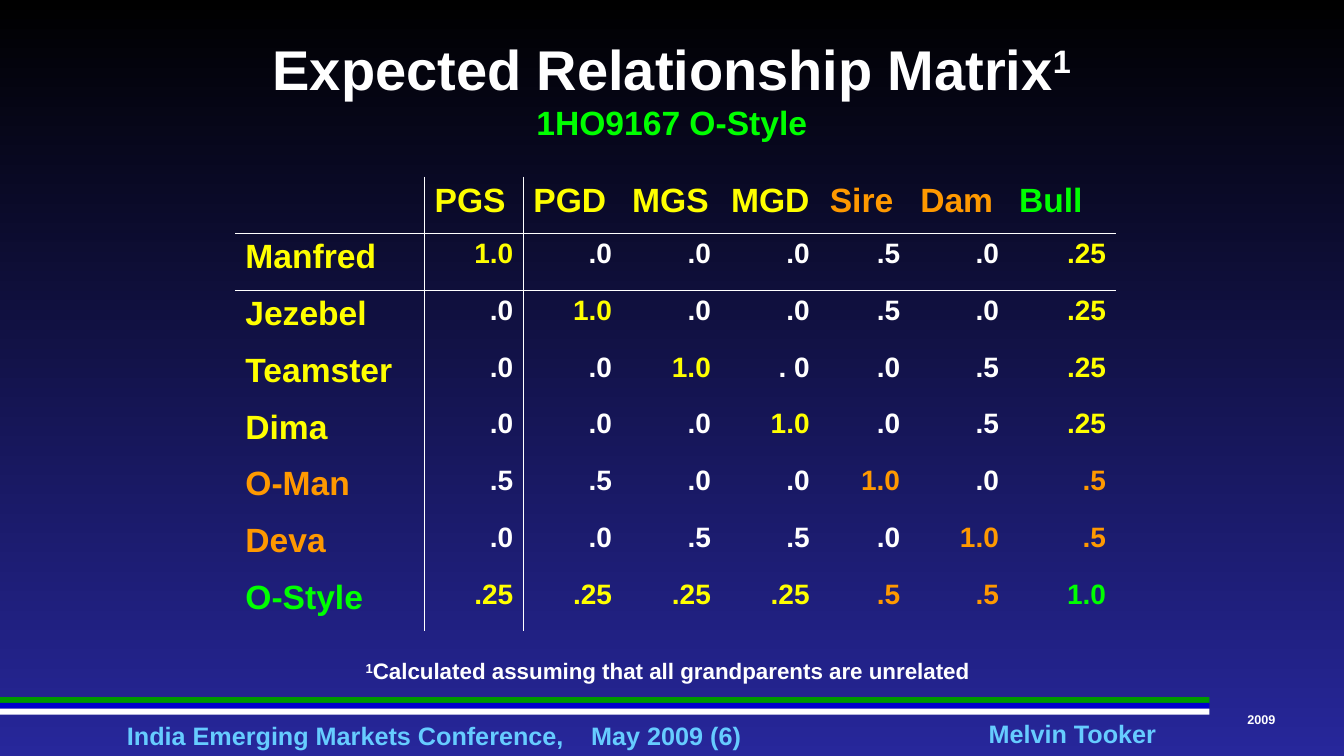
from dataclasses import dataclass

from lxml import etree
from pptx import Presentation
from pptx import util as u
from pptx.dml.color import RGBColor
from pptx.enum import shapes, text
from pptx.oxml import ns

WHITE, YELLOW, ORANGE, GREEN, SKY = "FFFFFF", "FFFF00", "FF9900", "00FF00", "66CCFF"
LEFT, MID, RIGHT = text.PP_ALIGN.LEFT, text.PP_ALIGN.CENTER, text.PP_ALIGN.RIGHT
PLAIN_GRID = "{2D5ABB26-0587-4C30-8999-92F81FD0307C}"


@dataclass
class Label:
    words: str
    left: float
    top: float
    width: float
    height: float
    size: int
    hue: str = SKY
    align: int = MID
    wrap: bool = True
    mark: str = ""
    inset: bool = False
    tab: float = 0


@dataclass
class Bar:
    top: float
    hue: str


@dataclass
class Member:
    role: str
    name: str
    hue: str
    width: float
    shares: str


LABELS = [
    Label("India Emerging Markets Conference,\tMay 2009 (6)", 3.2, 18.16, 19.94, 0.76, 18,
          align=LEFT, tab=11.7),
    Label("Melvin Tooker", 24.89, 18.1, 4.27, 0.76, 18, wrap=False),
    Label("2009", 31.32, 17.94, 0.94, 0.38, 9, WHITE),
    Label("Calculated assuming that all grandparents are unrelated", 5.72, 16.44, 22.22, 0.94,
          16, WHITE, mark="1", inset=True),
]
BARS = [Bar(17.57, "009900"), Bar(17.71, "0000CC"), Bar(17.86, WHITE)]
HERD = [
    Member("PGS", "Manfred", YELLOW, 2.49, "1.0,.0,.0,.0,.5,.0,.25"),
    Member("PGD", "Jezebel", YELLOW, 2.49, ".0,1.0,.0,.0,.5,.0,.25"),
    Member("MGS", "Teamster", YELLOW, 2.49, ".0,.0,1.0,. 0,.0,.5,.25"),
    Member("MGD", "Dima", YELLOW, 2.49, ".0,.0,.0,1.0,.0,.5,.25"),
    Member("Sire", "O-Man", ORANGE, 2.28, ".5,.5,.0,.0,1.0,.0,.5"),
    Member("Dam", "Deva", ORANGE, 2.49, ".0,.0,.5,.5,.0,1.0,.5"),
    Member("Bull", "O-Style", GREEN, 2.7, ".25,.25,.25,.25,.5,.5,1.0"),
]


def paint(target, hue: str) -> None:
    target.rgb = RGBColor.from_string(hue)


def write(para, words: str, *, size: int, hue: str, align: int = LEFT, high: bool = False) -> None:
    para.alignment = align
    run = para.add_run()
    run.text = words
    font = run.font
    font.name, font.size, font.bold = "Arial", u.Pt(size), True
    paint(font.color, hue)
    if high:
        font._element.set("baseline", "30000")


def add_label(slide, label: Label) -> None:
    box = slide.shapes.add_textbox(*map(u.Cm, (label.left, label.top, label.width, label.height)))
    frame = box.text_frame
    frame.word_wrap = label.wrap
    if not label.inset:
        frame.vertical_anchor = text.MSO_ANCHOR.MIDDLE
        frame.margin_left = frame.margin_right = frame.margin_top = frame.margin_bottom = 0
    para = frame.paragraphs[0]
    if label.tab:
        stops = etree.SubElement(para._p.get_or_add_pPr(), ns.qn("a:tabLst"))
        etree.SubElement(stops, ns.qn("a:tab"), pos=str(u.Cm(label.tab)), algn="l")
    if label.mark:
        write(para, label.mark, size=label.size, hue=label.hue, align=label.align, high=True)
    write(para, label.words, size=label.size, hue=label.hue, align=label.align)


def add_bar(slide, bar: Bar) -> None:
    shape = slide.shapes.add_shape(shapes.MSO_SHAPE.RECTANGLE, 0, u.Cm(bar.top), u.Cm(30.48), u.Cm(0.15))
    shape.shadow.inherit = False
    shape.fill.solid()
    paint(shape.fill.fore_color, bar.hue)
    shape.line.fill.background()


def add_title(slide) -> None:
    title = slide.shapes.title
    title.left, title.top, title.width, title.height = map(u.Cm, (0.84, 0.64, 32.18, 3.18))
    title.text_frame.vertical_anchor = text.MSO_ANCHOR.MIDDLE
    para = title.text_frame.paragraphs[0]
    write(para, "Expected Relationship Matrix", size=40, hue=WHITE, align=MID)
    write(para, "1", size=40, hue=WHITE, align=MID, high=True)
    para.add_line_break()
    write(para, "1HO9167 O-Style", size=24, hue=GREEN, align=MID)


def rule_cell(cell, sides: str) -> None:
    props = cell._tc.get_or_add_tcPr()
    for place, side in enumerate(sides):
        line = etree.Element(ns.qn(f"a:ln{side}"), w=str(u.Pt(1)))
        fill = etree.SubElement(line, ns.qn("a:solidFill"))
        etree.SubElement(fill, ns.qn("a:srgbClr"), val=WHITE)
        props.insert(place, line)


def share_hue(row: int, col: int) -> str:
    last = len(HERD) - 1
    if row == col or row == last:
        return HERD[col].hue
    return HERD[row].hue if col == last else WHITE


def add_matrix(slide) -> None:
    count = len(HERD) + 1
    widths = [4.77] + [member.width for member in HERD]
    frame = slide.shapes.add_table(count, count, u.Cm(5.93), u.Cm(4.45), u.Cm(sum(widths)), u.Cm(11.44))
    table = frame.table
    table.first_row = table.horz_banding = False
    table._tbl.tblPr.find(ns.qn("a:tableStyleId")).text = PLAIN_GRID
    for col, width in zip(table.columns, widths):
        col.width = u.Cm(width)
    for row in table.rows:
        row.height = u.Cm(1.43)
    for row in range(count):
        for col in range(count):
            cell = table.cell(row, col)
            cell.fill.background()
            sides = {0: "R", 1: "L"}.get(col, "") + {0: "B", 1: "T"}.get(row, "")
            rule_cell(cell, sides)
    for i, member in enumerate(HERD):
        for cell, words in ((table.cell(0, i + 1), member.role), (table.cell(i + 1, 0), member.name)):
            write(cell.text_frame.paragraphs[0], words, size=24, hue=member.hue)
        for j, share in enumerate(member.shares.split(",")):
            para = table.cell(i + 1, j + 1).text_frame.paragraphs[0]
            write(para, share, size=20, hue=share_hue(i, j), align=RIGHT)


def main() -> None:
    deck = Presentation()
    deck.slide_width, deck.slide_height = u.Cm(33.87), u.Cm(19.05)
    slide = deck.slides.add_slide(deck.slide_layouts[5])
    fill = slide.background.fill
    fill.gradient()
    fill.gradient_angle = 270
    for stop, hue in zip(fill.gradient_stops, ("000000", "27279B")):
        paint(stop.color, hue)
    for bar in BARS:
        add_bar(slide, bar)
    add_title(slide)
    add_matrix(slide)
    for label in LABELS:
        add_label(slide, label)
    deck.save("out.pptx")


if __name__ == "__main__":
    main()
